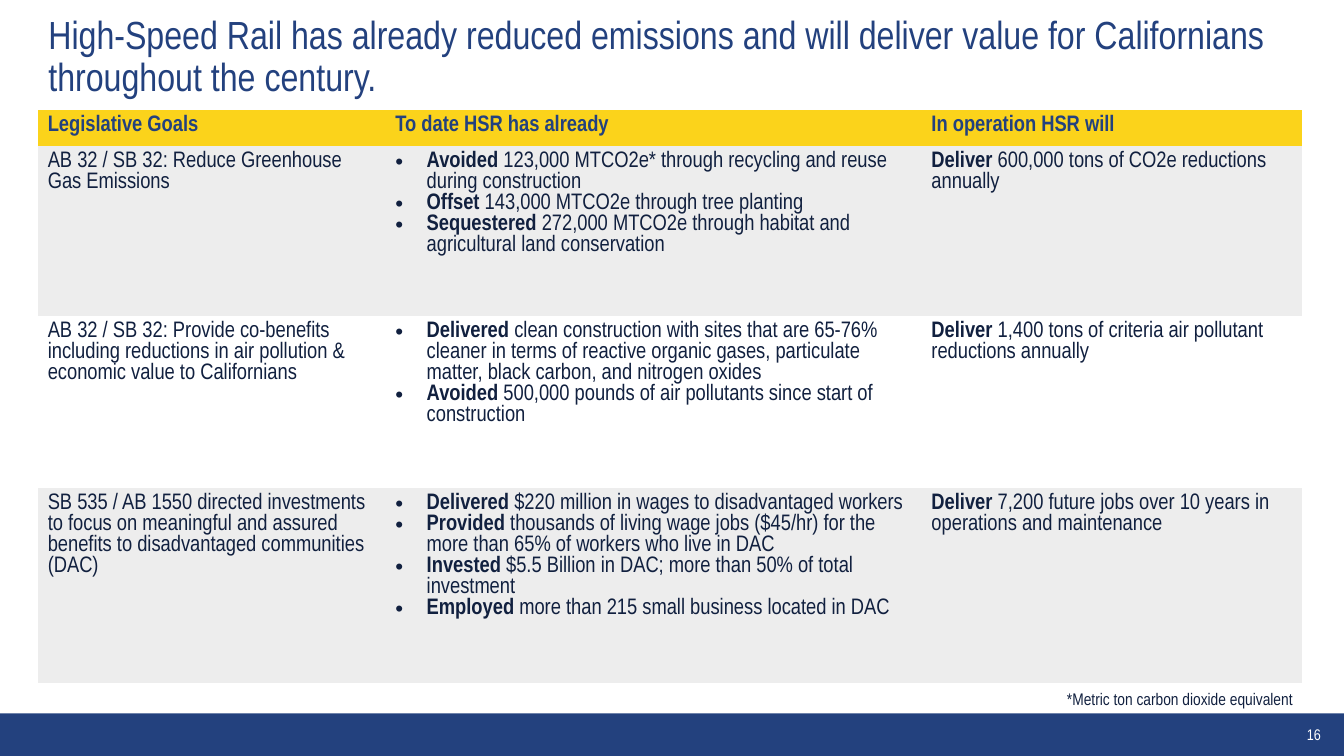
from lxml import etree
from pptx import Presentation
from pptx.dml.color import RGBColor
from pptx.enum.shapes import MSO_SHAPE
from pptx.enum.text import MSO_ANCHOR, PP_ALIGN
from pptx.oxml.ns import qn
from pptx.util import Cm, Pt

RECTANGLE = MSO_SHAPE.RECTANGLE
MIDDLE, TOP = MSO_ANCHOR.MIDDLE, MSO_ANCHOR.TOP
LEFT, CENTER = PP_ALIGN.LEFT, PP_ALIGN.CENTER
FONT = "Arial Narrow"
PLAIN_TABLE_STYLE = "{2D5ABB26-0587-4C30-8999-92F81FD0307C}"
COLORS = {
    "blue": "23417E",
    "navy": "11203F",
    "yellow": "FBD31B",
    "gray": "EDEDED",
    "white": "FFFFFF",
}
COLUMN_WIDTHS = (8.76, 13.51, 9.58)
ROW_HEIGHTS = (0.91, 4.28, 4.34, 4.92)
HEADINGS = ("Legislative Goals", "To date HSR has already", "In operation HSR will")
GOALS = [
    (
        "AB 32 / SB 32: Reduce Greenhouse Gas Emissions",
        [
            ("Avoided", " 123,000 MTCO2e* through recycling and reuse during construction"),
            ("Offset", " 143,000 MTCO2e through tree planting"),
            ("Sequestered", " 272,000 MTCO2e through habitat and agricultural land conservation"),
        ],
        ("Deliver", " 600,000 tons of CO2e reductions annually"),
    ),
    (
        "AB 32 / SB 32: Provide co-benefits including reductions in air pollution "
        "& economic value to Californians",
        [
            ("Delivered", " clean construction with sites that are 65-76% cleaner in terms of "
             "reactive organic gases, particulate matter, black carbon, and nitrogen oxides"),
            ("Avoided", " 500,000 pounds of air pollutants since start of construction"),
        ],
        ("Deliver", " 1,400 tons of criteria air pollutant reductions annually"),
    ),
    (
        "SB 535 / AB 1550 directed investments to focus on meaningful and assured "
        "benefits to disadvantaged communities (DAC)",
        [
            ("Delivered ", "$220 million in wages to disadvantaged workers"),
            ("Provided", " thousands of living wage jobs ($45/hr) for the more than 65% of "
             "workers who live in DAC"),
            ("Invested", " $5.5 Billion in DAC; more than 50% of total investment"),
            ("Employed", " more than 215 small business located in DAC"),
        ],
        ("Deliver", " 7,200 future jobs over 10 years in operations and maintenance"),
    ),
]


def rgb(name):
    return RGBColor.from_string(COLORS[name])


def add_run(paragraph, text, size=16, color="navy", bold=False):
    run = paragraph.add_run()
    run.text = text
    run.font.name = FONT
    run.font.size = Pt(size)
    run.font.bold = bold
    run.font.color.rgb = rgb(color)


def add_bullet(paragraph):
    properties = paragraph._p.get_or_add_pPr()
    properties.set("marL", str(Cm(0.79)))
    properties.set("indent", str(-Cm(0.79)))
    etree.SubElement(properties, qn("a:buFont")).set("typeface", "Arial")
    etree.SubElement(properties, qn("a:buChar")).set("char", "•")


def add_text(slide, text, left, top, width, height, size=12, color="navy",
             align=LEFT, anchor=TOP, spacing=1.0, wrap=True, margin=0.25):
    box = slide.shapes.add_textbox(Cm(left), Cm(top), Cm(width), Cm(height))
    frame = box.text_frame
    frame.word_wrap = wrap
    frame.vertical_anchor = anchor
    frame.margin_left = frame.margin_right = Cm(margin)
    paragraph = frame.paragraphs[0]
    paragraph.alignment = align
    paragraph.line_spacing = spacing
    add_run(paragraph, text, size, color)


def add_footer_bar(slide):
    bar = slide.shapes.add_shape(RECTANGLE, 0, Cm(17.98), Cm(33.87), Cm(1.07))
    bar.shadow.inherit = False
    bar.fill.solid()
    bar.fill.fore_color.rgb = rgb("blue")
    bar.line.fill.background()


def fill_cell(cell, paragraphs, fill, color="navy", bullets=False):
    cell.fill.solid()
    cell.fill.fore_color.rgb = rgb(fill)
    frame = cell.text_frame
    for index, (strong, rest) in enumerate(paragraphs):
        paragraph = frame.add_paragraph() if index else frame.paragraphs[0]
        if bullets:
            add_bullet(paragraph)
        if strong:
            add_run(paragraph, strong, color=color, bold=True)
        if rest:
            add_run(paragraph, rest, color=color)


def add_goals_table(slide):
    frame = slide.shapes.add_table(
        len(ROW_HEIGHTS), len(COLUMN_WIDTHS), Cm(0.95), Cm(2.77),
        Cm(sum(COLUMN_WIDTHS)), Cm(sum(ROW_HEIGHTS)))
    table = frame.table
    table.first_row = table.horz_banding = False
    table._tbl.tblPr.find(qn("a:tableStyleId")).text = PLAIN_TABLE_STYLE
    for column, width in zip(table.columns, COLUMN_WIDTHS):
        column.width = Cm(width)
    for row, height in zip(table.rows, ROW_HEIGHTS):
        row.height = Cm(height)
    for column, heading in enumerate(HEADINGS):
        fill_cell(table.cell(0, column), [(heading, "")], "yellow", color="blue")
    for row, (goal, achievements, outcome) in enumerate(GOALS, start=1):
        fill = "gray" if row % 2 else "white"
        fill_cell(table.cell(row, 0), [("", goal)], fill)
        fill_cell(table.cell(row, 1), achievements, fill, bullets=True)
        fill_cell(table.cell(row, 2), [outcome], fill)


def main():
    presentation = Presentation()
    presentation.slide_width = Cm(33.87)
    presentation.slide_height = Cm(19.05)
    slide = presentation.slides.add_slide(presentation.slide_layouts[6])
    add_footer_bar(slide)
    add_goals_table(slide)
    add_text(slide, "High-Speed Rail has already reduced emissions and will deliver value "
             "for Californians throughout the century.", 0.97, 0.33, 31.85, 2.26,
             size=28, color="blue", anchor=MIDDLE, spacing=0.9)
    add_text(slide, "16", 32.41, 18.26, 1.4, 0.51, size=11, color="white",
             align=CENTER, anchor=MIDDLE, margin=0)
    add_text(slide, "*Metric ton carbon dioxide equivalent", 26.64, 17.22, 6.27, 0.76,
             wrap=False)
    presentation.save("out.pptx")


if __name__ == "__main__":
    main()
